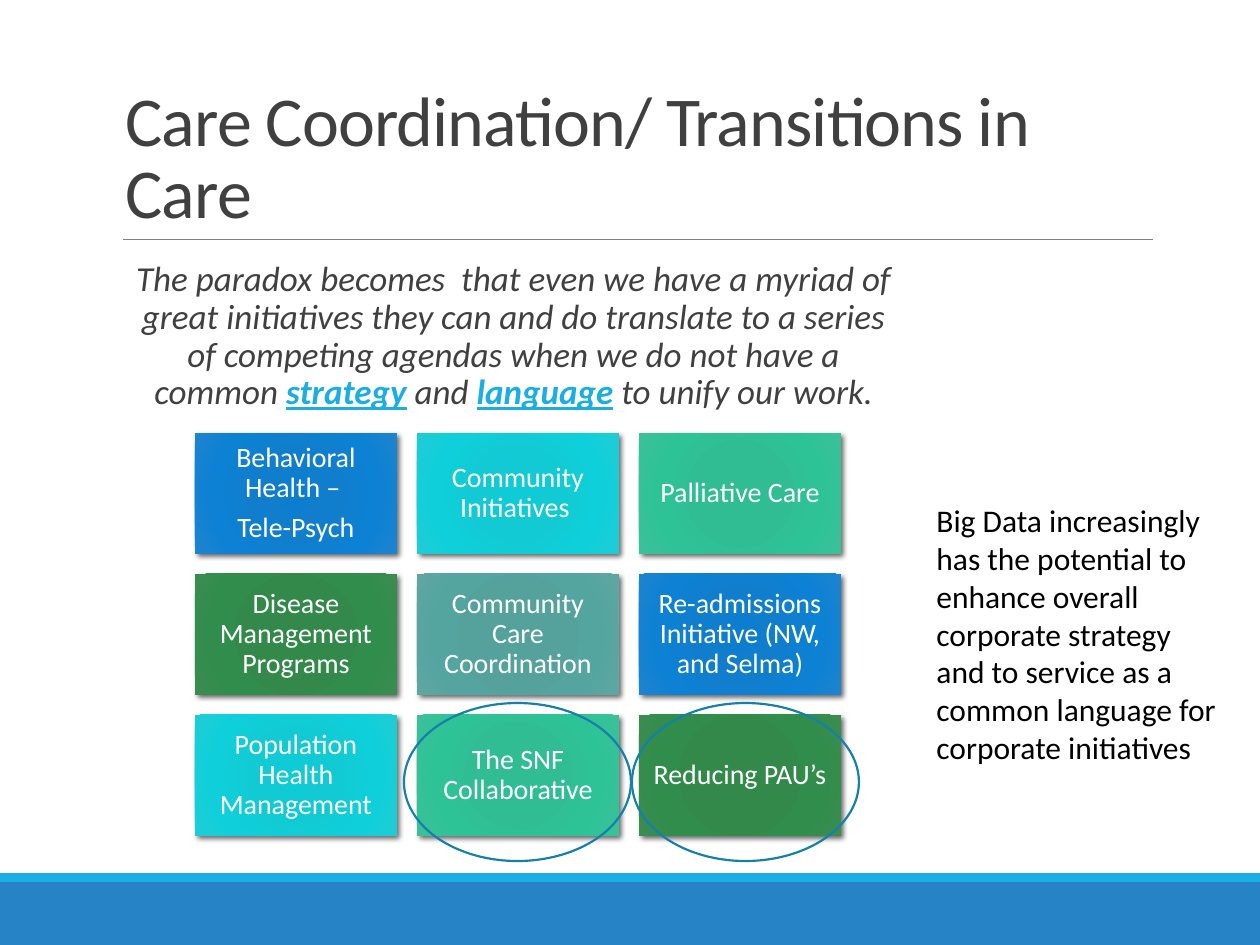
from lxml.etree import SubElement
from pptx import Presentation
from pptx.dml.color import RGBColor
from pptx.enum.shapes import MSO_CONNECTOR, MSO_SHAPE
from pptx.enum.text import MSO_ANCHOR, MSO_AUTO_SIZE, PP_ALIGN
from pptx.oxml import parse_xml
from pptx.oxml.ns import qn
from pptx.util import Emu, Pt

SCALE = 914400 / 126  # EMU in one px
NS = 'xmlns:a="http://schemas.openxmlformats.org/drawingml/2006/main"'
DARK, SKY, WHITE = "404040", "1CADE4", "FFFFFF"

STOPS = (0, 34, 70, 100)
FILLS = (
    ("0D7ECF", "117ECD", "0D81D4", "1E84CE"),
    ("0ECBD5", "12CAD3", "0FD0DA", "20CBD4"),
    ("2DBE94", "30BD94", "2EC397", "3CC09A"),
    ("2F8949", "32894A", "318D4B", "3A8C51"),
    ("52A19C", "55A19C", "54A5A0", "5FA6A2"),
)
TILES = (
    ("Behavioral Health – ", "Tele-Psych"),
    ("Community Initiatives ",),
    ("Palliative Care",),
    ("Disease Management Programs",),
    ("Community Care Coordination",),
    ("Re-admissions Initiative (NW, and Selma)",),
    ("Population Health Management",),
    ("The SNF Collaborative",),
    ("Reducing PAU’s",),
)
QUOTE = (
    ("The paradox becomes  that even we have a myriad of great initiatives "
     "they can and do translate to a series of competing agendas when we do "
     "not have a common ", False),
    ("strategy", True),
    (" and ", False),
    ("language", True),
    (" to unify our work.", False),
)
NOTE = ("Big Data increasingly has the potential to enhance overall corporate "
        "strategy and to service as a common language for corporate initiatives")


def px(*nums):
    return [Emu(round(n * SCALE)) for n in nums]


def paint(color, code):
    color.rgb = RGBColor.from_string(code)


def move(shape, *box):
    shape.left, shape.top, shape.width, shape.height = px(*box)


def add_run(para, text, size, code):
    run = para.add_run()
    run.text = text
    run.font.name = "Calibri"
    run.font.size = Pt(size)
    paint(run.font.color, code)
    return run


def add_shape(slide, kind, *box):
    """Add a preset shape with no shadow and no line."""
    shape = slide.shapes.add_shape(kind, *px(*box))
    shape.shadow.inherit = False
    shape.line.fill.background()
    return shape


def add_band(slide, code, *box):
    band = add_shape(slide, MSO_SHAPE.RECTANGLE, *box)
    band.fill.solid()
    paint(band.fill.fore_color, code)


def add_rule(slide, *ends):
    rule = slide.shapes.add_connector(MSO_CONNECTOR.STRAIGHT, *px(*ends))
    rule.line.width = Pt(0.5)
    paint(rule.line.color, "808080")
    SubElement(rule._element.spPr, qn("a:effectLst"))


def set_title(slide):
    title = slide.shapes.title
    move(title, 113, 39, 1062, 200)
    frame = title.text_frame
    frame.auto_size = MSO_AUTO_SIZE.NONE
    frame.vertical_anchor = MSO_ANCHOR.BOTTOM
    para = frame.paragraphs[0]
    para.alignment = PP_ALIGN.LEFT
    para.line_spacing = 0.85
    run = add_run(para, "Care Coordination/ Transitions in Care", 40, DARK)
    run.font._element.set("spc", "-50")


def set_quote(slide):
    body = slide.placeholders[1]
    move(body, 113, 255, 789, 554)
    frame = body.text_frame
    frame.auto_size = MSO_AUTO_SIZE.NONE
    frame.margin_left = frame.margin_right = 0
    para = frame.paragraphs[0]
    para.alignment = PP_ALIGN.CENTER
    para.line_spacing = 0.9
    para.space_before, para.space_after = Pt(12), Pt(2)
    props = para._p.get_or_add_pPr()
    props.set("marL", "91440")
    props.set("indent", "-91440")
    SubElement(props, qn("a:buChar"), char=" ")
    for text, key in QUOTE:
        font = add_run(para, text, 20, SKY if key else DARK).font
        font.italic = True
        font.bold = font.underline = key


def shade(shape, codes):
    """Give a shape a round gradient and a soft shadow."""
    stops = "".join(
        f'<a:gs pos="{stop * 1000}"><a:srgbClr val="{code}"/></a:gs>'
        for stop, code in zip(STOPS, codes))
    props = shape._element.spPr
    props.find(qn("a:ln")).addprevious(parse_xml(
        f'<a:gradFill {NS} rotWithShape="1"><a:gsLst>{stops}</a:gsLst>'
        '<a:path path="circle"><a:fillToRect l="100000" t="100000" '
        'r="100000" b="100000"/></a:path></a:gradFill>'))
    props.find(qn("a:effectLst")).append(parse_xml(
        f'<a:outerShdw {NS} blurRad="38100" dist="25400" dir="2700000" '
        'rotWithShape="0"><a:srgbClr val="000000"><a:alpha val="60000"/>'
        '</a:srgbClr></a:outerShdw>'))


def add_tile(slide, lines, codes, *box):
    tile = add_shape(slide, MSO_SHAPE.RECTANGLE, *box)
    shade(tile, codes)
    frame = tile.text_frame
    frame.word_wrap = True
    frame.vertical_anchor = MSO_ANCHOR.MIDDLE
    frame.margin_left = frame.margin_right = px(9)[0]
    frame.margin_top = frame.margin_bottom = px(9)[0]
    for i, line in enumerate(lines):
        para = frame.add_paragraph() if i else frame.paragraphs[0]
        para.alignment = PP_ALIGN.CENTER
        para.line_spacing = 0.9
        para.space_after = Pt(5.6)
        add_run(para, line, 16, WHITE)


def add_ring(slide, *box):
    ring = add_shape(slide, MSO_SHAPE.OVAL, *box)
    ring.fill.background()
    paint(ring.line.color, "1580A9")
    ring.line.width = Pt(1.25)


def add_note(slide):
    frame = slide.shapes.add_textbox(*px(924, 495, 306, 280)).text_frame
    frame.word_wrap = True
    frame.auto_size = MSO_AUTO_SIZE.SHAPE_TO_FIT_TEXT
    add_run(frame.paragraphs[0], NOTE, 18, "000000")


def main():
    deck = Presentation()
    deck.slide_width, deck.slide_height = px(1260, 945)
    slide = deck.slides.add_slide(deck.slide_layouts[1])
    add_band(slide, "2683C6", 0, 882, 1260, 63)
    add_band(slide, SKY, 0, 873, 1260, 9)
    add_rule(slide, 123, 239, 1153, 239)
    set_title(slide)
    set_quote(slide)
    for i, lines in enumerate(TILES):
        row, col = divmod(i, 3)
        add_tile(slide, lines, FILLS[i % len(FILLS)],
                 195 + 222 * col, 433 + 141 * row, 202, 121)
    for left in (404, 632):
        add_ring(slide, left, 703, 227, 158)
    add_note(slide)
    deck.save("out.pptx")


if __name__ == "__main__":
    main()
